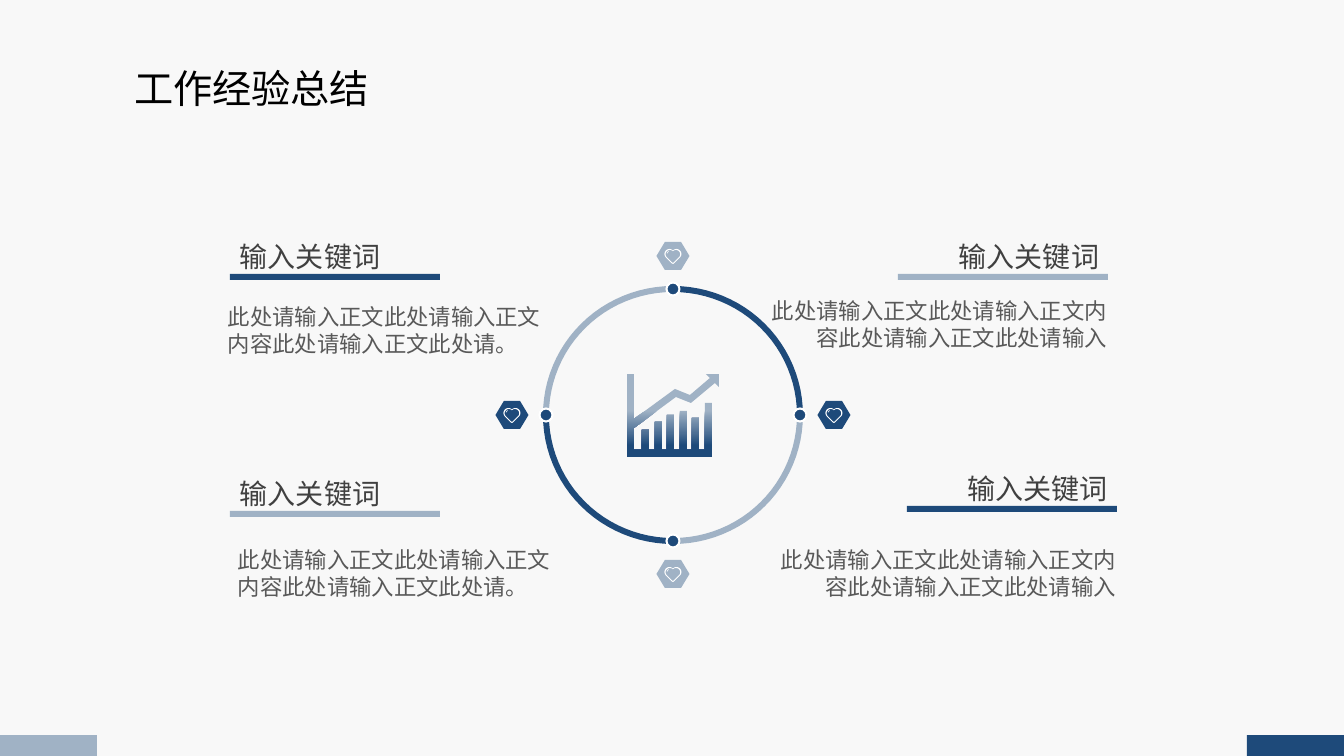
import math
import pptx
import pptx.util
import pptx.dml.color
import pptx.enum.shapes
import pptx.enum.text
import pptx.oxml.ns
import lxml.etree

RGBColor = pptx.dml.color.RGBColor
SHAPE = pptx.enum.shapes.MSO_SHAPE
ALIGN = pptx.enum.text.PP_ALIGN

NAVY = RGBColor(0x1E, 0x4A, 0x7A)
MIST = RGBColor(0xA0, 0xB2, 0xC5)
WHITE = RGBColor(0xFF, 0xFF, 0xFF)
PAPER = RGBColor(0xF8, 0xF8, 0xF8)
FONT = "Noto Sans CJK SC"

# Content: boxes are left, top, width, height in px
TITLE = ("工作经验总结", (124, 59, 329, 57))
KEYWORD = "输入关键词"
LEFT_BODY = "此处请输入正文此处请输入正文内容此处请输入正文此处请。"
RIGHT_BODY = "此处请输入正文此处请输入正文内容此处请输入正文此处请输入"
# heading corner, bar corner, bar colour, body text, body box, alignment
TOPICS = [
    ((230, 235), (230, 274), NAVY, LEFT_BODY, (218, 298, 349, 65), ALIGN.LEFT),
    ((230, 472), (230, 511), MIST, LEFT_BODY, (228, 541, 349, 65), ALIGN.LEFT),
    ((945, 235), (898, 274), MIST, RIGHT_BODY, (754, 292, 363, 65), ALIGN.RIGHT),
    ((954, 467), (907, 506), NAVY, RIGHT_BODY, (763, 541, 363, 65), ALIGN.RIGHT),
]
FOOTER_BARS = [(0, MIST), (1247, NAVY)]

# Ring: centre, outer and inner radii, and its four compass points
CENTRE = (673, 415)
OUTER, INNER = (130, 129), (124, 123)
DOT_REACH, BADGE_REACH = (127, 126), (161, 159)
QUARTERS = [NAVY, MIST, NAVY, MIST]  # clockwise from the top
COMPASS = [(0, -1, MIST), (1, 0, NAVY), (0, 1, MIST), (-1, 0, NAVY)]

# Heart outline in an 18 by 15 px field: cubic curves as control points
HEART_CURVES = [
    ((9, 2), (11, 0), (14, 0), (16, 2)),
    ((16, 2), (18, 4), (18, 7), (16, 9)),
    ((10, 15), (9, 15.5), (9, 15.5), (8, 15)),
    ((2, 9), (0, 7), (0, 4), (2, 2)),
    ((2, 2), (4, 0), (7, 0), (9, 2)),
]
HEART_MIDDLE = (9, 7.5)
HEART_GLINT = [(3, 5), (3.5, 3.5), (5, 2.8), (5, 3.3), (4, 3.8), (3.5, 5)]

# Growth icon: axis with trend arrow, then bars standing on the axis
TREND = [(627, 457), (627, 374), (634, 374), (634, 419), (675, 389), (690, 395),
         (710, 378), (706, 374), (719, 374), (719, 387), (715, 383), (691, 403),
         (676, 397), (634, 428), (634, 450)]
BAR_TOPS = [430, 422, 415, 411, 418, 403]
BAR_START, BAR_STEP, BAR_WIDTH, BAR_BASE = 642, 12.6, 7, 450

SCALE = 914400 / 100.8


def emu(*lengths):
    return [pptx.util.Emu(round(length * SCALE)) for length in lengths]


def paint(shape, colour, outline=None):
    shape.shadow.inherit = False
    shape.fill.solid()
    shape.fill.fore_color.rgb = colour
    if outline:
        shape.line.color.rgb = outline
        shape.line.width = pptx.util.Pt(1.5)
    else:
        shape.line.fill.background()
    return shape


def add_preset(page, kind, box, colour, outline=None):
    return paint(page.shapes.add_shape(kind, *emu(*box)), colour, outline)


def add_outline(page, contours, colour):
    builder = None
    for contour in contours:
        points = [tuple(emu(*point)) for point in contour]
        if builder is None:
            builder = page.shapes.build_freeform(*points[0], scale=1.0)
        else:
            builder.move_to(*points[0])
        builder.add_line_segments(points[1:], close=True)
    return paint(builder.convert_to_shape(), colour)


def write(box, text, size, colour, align):
    frame = box.text_frame
    settings = {"word_wrap": True, "vertical_anchor": pptx.enum.text.MSO_ANCHOR.TOP,
                "auto_size": pptx.enum.text.MSO_AUTO_SIZE.SHAPE_TO_FIT_TEXT}
    for name, value in settings.items():
        setattr(frame, name, value)
    para = frame.paragraphs[0]
    para.alignment = align
    para.line_spacing = pptx.util.Pt(size * 1.2)
    span = para.add_run()
    span.text = text
    for name, value in {"size": pptx.util.Pt(size), "name": FONT, "bold": False}.items():
        setattr(span.font, name, value)
    span.font.color.rgb = RGBColor.from_string(colour)
    east_asian = lxml.etree.SubElement(span.font._element, pptx.oxml.ns.qn("a:ea"))
    east_asian.set("typeface", FONT)


def arc(radii, start):
    angles = [math.radians(start + 90 * step / 24) for step in range(25)]
    return [(CENTRE[0] + radii[0] * math.cos(angle),
             CENTRE[1] + radii[1] * math.sin(angle)) for angle in angles]


def cubic(controls, steps=8):
    points = []
    for step in range(steps + 1):
        t = step / steps
        weights = ((1 - t) ** 3, 3 * t * (1 - t) ** 2, 3 * t * t * (1 - t), t ** 3)
        points.append(tuple(sum(weight * control[axis] for weight, control
                                in zip(weights, controls)) for axis in (0, 1)))
    return points


def place_heart(points, x, y, factor=1):
    return [(x + (px - HEART_MIDDLE[0]) * factor, y + (py - HEART_MIDDLE[1]) * factor)
            for px, py in points]


def add_ring(page):
    for index, colour in enumerate(QUARTERS):
        start = 90 * index - 90
        add_outline(page, [arc(OUTER, start) + arc(INNER, start)[::-1]], colour)
    heart = [point for curve in HEART_CURVES for point in cubic(curve)]
    for across, down, colour in COMPASS:
        x, y = (CENTRE[0] + across * DOT_REACH[0], CENTRE[1] + down * DOT_REACH[1])
        add_preset(page, SHAPE.OVAL, (x - 6.5, y - 6.5, 13, 13), NAVY, WHITE)
        x, y = (CENTRE[0] + across * BADGE_REACH[0], CENTRE[1] + down * BADGE_REACH[1])
        badge = add_preset(page, SHAPE.HEXAGON, (x - 16.5, y - 14, 33, 28), colour)
        badge.adjustments[0] = 0.3
        add_outline(page, [place_heart(heart, x, y),
                           place_heart(heart, x, y, 0.86)[::-1],
                           place_heart(HEART_GLINT, x, y)], WHITE)


def add_growth_icon(page):
    points = list(TREND)
    for index, top in enumerate(BAR_TOPS):
        left = round(BAR_START + index * BAR_STEP)
        right = left + BAR_WIDTH
        points += [(left, BAR_BASE), (left, top), (right, top), (right, BAR_BASE)]
    points.append((right, TREND[0][1]))
    icon = add_outline(page, [points], NAVY)
    icon.fill.gradient()
    icon.fill.gradient_angle = 270
    for stop, position, colour in zip(icon.fill.gradient_stops, (0.44, 0.86), (MIST, NAVY)):
        stop.position = position
        stop.color.rgb = colour


def main():
    deck = pptx.Presentation()
    deck.slide_width, deck.slide_height = emu(1344, 756)
    page = deck.slides.add_slide(deck.slide_layouts[5])
    page.background.fill.solid()
    page.background.fill.fore_color.rgb = PAPER

    # Title
    text, box = TITLE
    title = page.shapes.title
    for name, value in zip(("left", "top", "width", "height"), emu(*box)):
        setattr(title, name, value)
    write(title, text, 28, "000000", ALIGN.JUSTIFY)

    # Ring and icon
    add_ring(page)
    add_growth_icon(page)

    # Four topics
    for heading, bar, colour, body, body_box, align in TOPICS:
        write(page.shapes.add_textbox(*emu(*heading, 164, 44)), KEYWORD, 20, "404040", align)
        add_preset(page, SHAPE.RECTANGLE, (*bar, 210, 6), colour)
        write(page.shapes.add_textbox(*emu(*body_box)), body, 16, "595959", align)

    # Footer bars
    for left, colour in FOOTER_BARS:
        add_preset(page, SHAPE.RECTANGLE, (left, 735, 97, 21), colour)

    deck.save("out.pptx")


if __name__ == "__main__":
    main()
